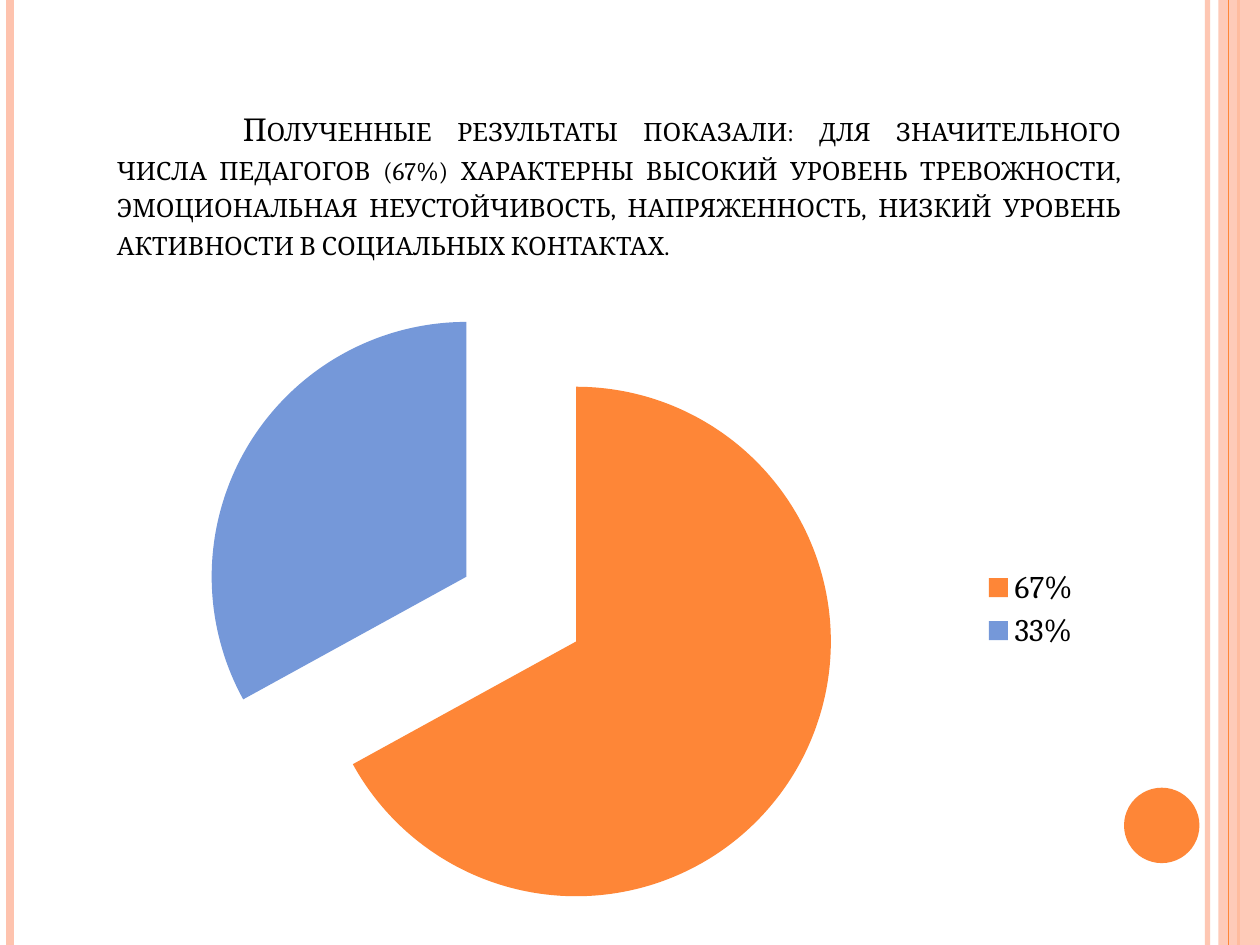
from lxml import etree
from pptx import Presentation
from pptx import util as u
from pptx.chart import data
from pptx.dml.color import RGBColor
from pptx.enum import chart as charts, shapes, text
from pptx.oxml.ns import qn

HUES = {"orange": "FE8637", "peach": "FEC3AE", "blue": "7598D9",
        "slate": "575F6D", "black": "000000"}
HIGH = 19.05
FINDING = ("Полученные результаты показали: для значительного числа педагогов (67%) "
           "характерны высокий уровень тревожности, эмоциональная неустойчивость, "
           "напряженность, низкий уровень активности в социальных контактах.")


def hue(name):
    return RGBColor.from_string(HUES[name])


def style(font, size=18, color="black", caps=False):
    font.name, font.size = "Cambria", u.Pt(size)
    font.color.rgb = hue(color)
    if caps:
        font._element.set("cap", "small")


def write(para, words, **form):
    run = para.add_run()
    run.text = words
    style(run.font, **form)


def stop(para, x):
    """Set a left tab stop."""
    tabs = etree.SubElement(para._p.get_or_add_pPr(), qn("a:tabLst"))
    etree.SubElement(tabs, qn("a:tab"), pos=str(u.Cm(x)), algn="l")


def fade(item, share):
    """Make the item's colour partly transparent; share is percent opaque."""
    color = next(item._element.spPr.iter(qn("a:srgbClr")))
    etree.SubElement(color, qn("a:alpha"), val=str(share * 1000))


class Page:
    def __init__(self, deck):
        self.slide = deck.slides.add_slide(deck.slide_layouts[5])
        self.items = self.slide.shapes

    def rule(self, x, color, width, share=100):
        """Draw a full-height vertical line."""
        line = self.items.add_connector(
            shapes.MSO_CONNECTOR.STRAIGHT, u.Cm(x), 0, u.Cm(x), u.Cm(HIGH))
        line.line.color.rgb = hue(color)
        line.line.width = u.Pt(width)
        etree.SubElement(line._element.spPr, qn("a:effectLst"))
        if share < 100:
            fade(line, share)

    def shape(self, kind, box, color, share=100):
        item = self.items.add_shape(kind, *map(u.Cm, box))
        item.shadow.inherit = False
        item.fill.solid()
        item.fill.fore_color.rgb = hue(color)
        item.line.fill.background()
        if share < 100:
            fade(item, share)

    def title(self, box, words):
        item = self.items.title
        item.left, item.top, item.width, item.height = map(u.Cm, box)
        frame = item.text_frame
        frame.word_wrap = True
        frame.auto_size = text.MSO_AUTO_SIZE.NONE
        frame.vertical_anchor = text.MSO_ANCHOR.BOTTOM
        para = frame.paragraphs[0]
        para.alignment = text.PP_ALIGN.JUSTIFY
        stop(para, 2.54)
        write(para, "\t", size=20, color="slate", caps=True)
        write(para, words, caps=True)

    def pie(self, box, parts, colors, burst):
        """Draw a pie with its slices pulled apart by burst percent."""
        table = data.CategoryChartData()
        table.categories = [f"{part}%" for part in parts]
        table.add_series("Series 1", parts)
        chart = self.items.add_chart(
            charts.XL_CHART_TYPE.PIE, *map(u.Cm, box), table).chart
        style(chart.font)
        chart.has_title = False
        chart.has_legend = True
        chart.legend.position = charts.XL_LEGEND_POSITION.RIGHT
        chart.legend.include_in_layout = False
        plot = chart.plots[0]
        plot.vary_by_categories = True
        series = plot.series[0]
        gap = etree.Element(qn("c:explosion"), val=str(burst))
        series._element.find(qn("c:tx")).addnext(gap)
        for spot, color in enumerate(colors):
            fill = series.points[spot].format.fill
            fill.solid()
            fill.fore_color.rgb = hue(color)


def main():
    deck = Presentation()
    deck.slide_width, deck.slide_height = u.Cm(25.4), u.Cm(HIGH)
    page = Page(deck)
    page.rule(24.34, "peach", 3, share=93)
    page.rule(0.21, "peach", 4.5)
    page.rule(24.97, "orange", 1.5)
    page.shape(shapes.MSO_SHAPE.RECTANGLE, (24.56, 0, 0.84, HIGH), "peach", share=87)
    page.rule(24.77, "orange", 0.75)
    page.shape(shapes.MSO_SHAPE.OVAL, (22.66, 15.88, 1.52, 1.52), "orange")
    page.title((2.1, 0, 20.75, 5.41), FINDING)
    page.pie((1.29, 5.51, 20.75, 13.54), (67, 33), ("orange", "blue"), burst=25)
    deck.save("out.pptx")


if __name__ == "__main__":
    main()
